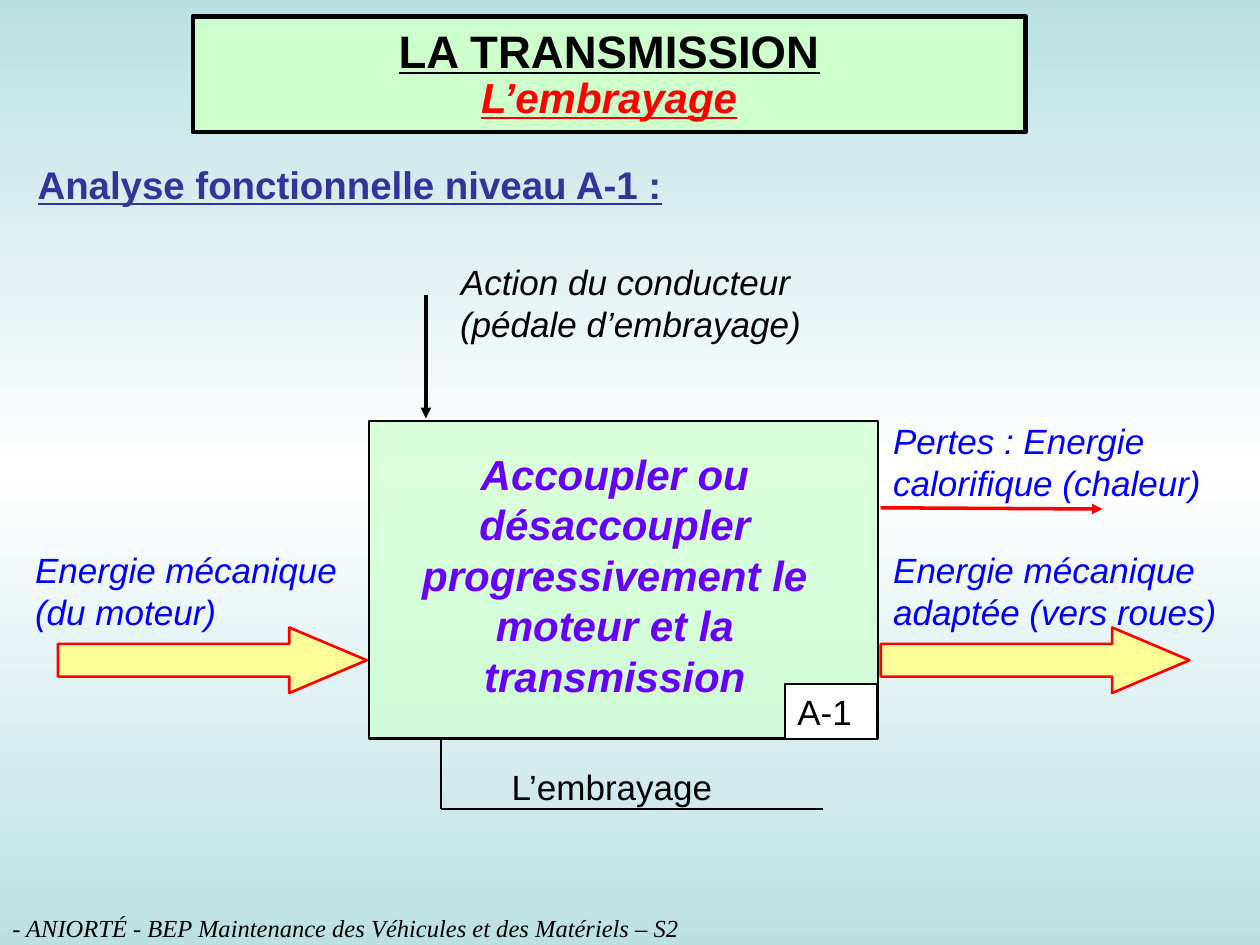
from copy import deepcopy

from lxml.etree import SubElement
from pptx import Presentation
from pptx.dml.color import RGBColor
from pptx.enum.shapes import MSO_CONNECTOR, MSO_SHAPE
from pptx.enum.text import MSO_ANCHOR, MSO_AUTO_SIZE, PP_ALIGN
from pptx.oxml.ns import qn
from pptx.util import Inches, Pt

BLACK = RGBColor(0x00, 0x00, 0x00)
WHITE = RGBColor(0xFF, 0xFF, 0xFF)
RED = RGBColor(0xFF, 0x00, 0x00)
BLUE = RGBColor(0x00, 0x00, 0xFF)
NAVY = RGBColor(0x33, 0x33, 0x99)
VIOLET = RGBColor(0x66, 0x00, 0xFF)
MINT = RGBColor(0xCC, 0xFF, 0xCC)
YELLOW = RGBColor(0xFF, 0xFF, 0x99)
TEAL = RGBColor(0xBB, 0xE0, 0xE3)


def emu(*lengths):
    return [Inches(length) for length in lengths]


def write(shape, lines, size, color, align=PP_ALIGN.LEFT, font="Arial",
          bold=False, italic=False, underline=False):
    """Fill a shape with top-anchored paragraphs in one style."""
    frame = shape.text_frame
    frame.text = "\n".join(lines)
    frame.word_wrap = True
    frame.auto_size = MSO_AUTO_SIZE.NONE
    frame.vertical_anchor = MSO_ANCHOR.TOP
    for paragraph in frame.paragraphs:
        paragraph.alignment = align
        style = paragraph.font
        style.name, style.size, style.color.rgb = font, Pt(size), color
        style.bold, style.italic, style.underline = bold, italic, underline


def add_label(slide, box, lines, size, color, **style):
    label = slide.shapes.add_textbox(*emu(*box))
    write(label, lines, size, color, **style)
    return label


def paint(shape, fill, line, width):
    shape.fill.solid()
    shape.fill.fore_color.rgb = fill
    shape.line.color.rgb = line
    shape.line.width = Pt(width)


def add_block(slide, kind, box, fill, line, width):
    block = slide.shapes.add_shape(kind, *emu(*box))
    block.shadow.inherit = False
    paint(block, fill, line, width)
    return block


def add_line(slide, start, end, color, width, arrow=False):
    line = slide.shapes.add_connector(MSO_CONNECTOR.STRAIGHT, *emu(*start, *end))
    line.line.color.rgb = color
    line.line.width = Pt(width)
    if arrow:
        SubElement(line.line._get_or_add_ln(), qn("a:tailEnd"), type="triangle")
    SubElement(line._element.spPr, qn("a:effectLst"))


def add_background(slide):
    fill = slide.background.fill
    fill.gradient()
    fill.gradient_angle = 90
    for stop in fill.gradient_stops:
        stop.color.rgb = TEAL
    first = slide._element.find(".//" + qn("a:gs"))
    first.addnext(deepcopy(first))
    middle = fill.gradient_stops[1]
    middle.position = 0.5
    middle.color.rgb = WHITE


def add_header(slide, box):
    """Framed course title with the lesson name below it."""
    left, top, width, height = box
    title = slide.shapes.title
    title.left, title.top, title.width, title.height = emu(*box)
    paint(title, MINT, BLACK, 2.5)
    write(title, ["LA TRANSMISSION"], 26, BLACK, align=PP_ALIGN.CENTER,
          bold=True, underline=True)
    add_label(slide, (left, top + 0.39, width, 0.5), ["L’embrayage"], 24, RED,
              align=PP_ALIGN.CENTER, bold=True, italic=True, underline=True)


def add_energy_arrow(slide, left, top):
    arrow = add_block(slide, MSO_SHAPE.RIGHT_ARROW, (left, top, 2.45, 0.52),
                      YELLOW, RED, 1.5)
    arrow.adjustments[1] = 1.18


def add_function(slide, box):
    """Function box with its level tag and its support below."""
    left, top, width, height = box
    right, bottom = left + width, top + height
    function = add_block(slide, MSO_SHAPE.RECTANGLE, box, MINT, BLACK, 1.5)
    tint = function._element.spPr.find(".//" + qn("a:srgbClr"))
    SubElement(tint, qn("a:alpha"), val="70000")
    add_label(slide, (left + 0.1, top + 0.17, 3.7, 2.1),
              ["Accoupler ou désaccoupler progressivement le moteur et la transmission"],
              24, VIOLET, align=PP_ALIGN.CENTER, bold=True, italic=True)
    tag = add_block(slide, MSO_SHAPE.RECTANGLE, (right - 0.74, bottom - 0.43, 0.73, 0.43),
                    WHITE, BLACK, 0.75)
    write(tag, ["A-1"], 20, BLACK)

    # Support of the function
    corner = (left + 0.57, bottom + 0.56)
    add_line(slide, (corner[0], bottom), corner, BLACK, 1.5)
    add_line(slide, corner, (corner[0] + 3.03, corner[1]), BLACK, 1.5)
    support = add_label(slide, (left + 0.5, bottom + 0.17, 3.45, 0.42),
                        ["L’embrayage"], 20, BLACK)
    support.text_frame.margin_left = Inches(0.63)


def add_flows(slide, box):
    """Control, input and outputs around the function box."""
    left, top, width, height = box
    right = left + width + 0.02
    label_top, arrow_top = top + 0.96, top + 1.64

    # Control by the driver
    add_line(slide, (left + 0.45, top - 1), (left + 0.45, top - 0.02), BLACK, 2, arrow=True)
    add_label(slide, (left + 0.51, top - 1.32, 3.13, 1.04),
              ["Action du conducteur ", "(pédale d’embrayage)"], 20, BLACK,
              align=PP_ALIGN.CENTER, italic=True)

    # Input from the engine
    add_energy_arrow(slide, left - 2.47, arrow_top)
    add_label(slide, (left - 2.75, label_top, 2.91, 0.78),
              ["Energie mécanique", "(du moteur)"], 20, BLUE, italic=True)

    # Outputs: losses and adapted energy
    add_line(slide, (right, top + 0.69), (right + 1.76, top + 0.7), RED, 2, arrow=True)
    add_label(slide, (right, top - 0.06, 2.76, 0.68),
              ["Pertes\u00a0: Energie calorifique (chaleur)"], 20, BLUE, italic=True)
    add_energy_arrow(slide, right, arrow_top)
    add_label(slide, (right, label_top, 3.01, 0.78),
              ["Energie mécanique adaptée (vers roues)"], 20, BLUE, italic=True)


def main():
    deck = Presentation()
    deck.slide_width, deck.slide_height = emu(10, 7.5)
    slide = deck.slides.add_slide(deck.slide_layouts.get_by_name("Title Only"))
    add_background(slide)
    add_header(slide, (1.53, 0.13, 6.61, 0.92))
    add_label(slide, (0.2, 1.23, 5.43, 0.47), ["Analyse fonctionnelle niveau A-1 :"],
              22, NAVY, bold=True, underline=True)
    function_box = (2.93, 3.34, 4.04, 2.52)
    add_function(slide, function_box)
    add_flows(slide, function_box)
    add_label(slide, (0, 7.2, 6.06, 0.33),
              ["- ANIORTÉ - BEP Maintenance des Véhicules et des Matériels – S2"],
              14, BLACK, font="Times New Roman", italic=True)
    deck.save("out.pptx")


if __name__ == "__main__":
    main()
